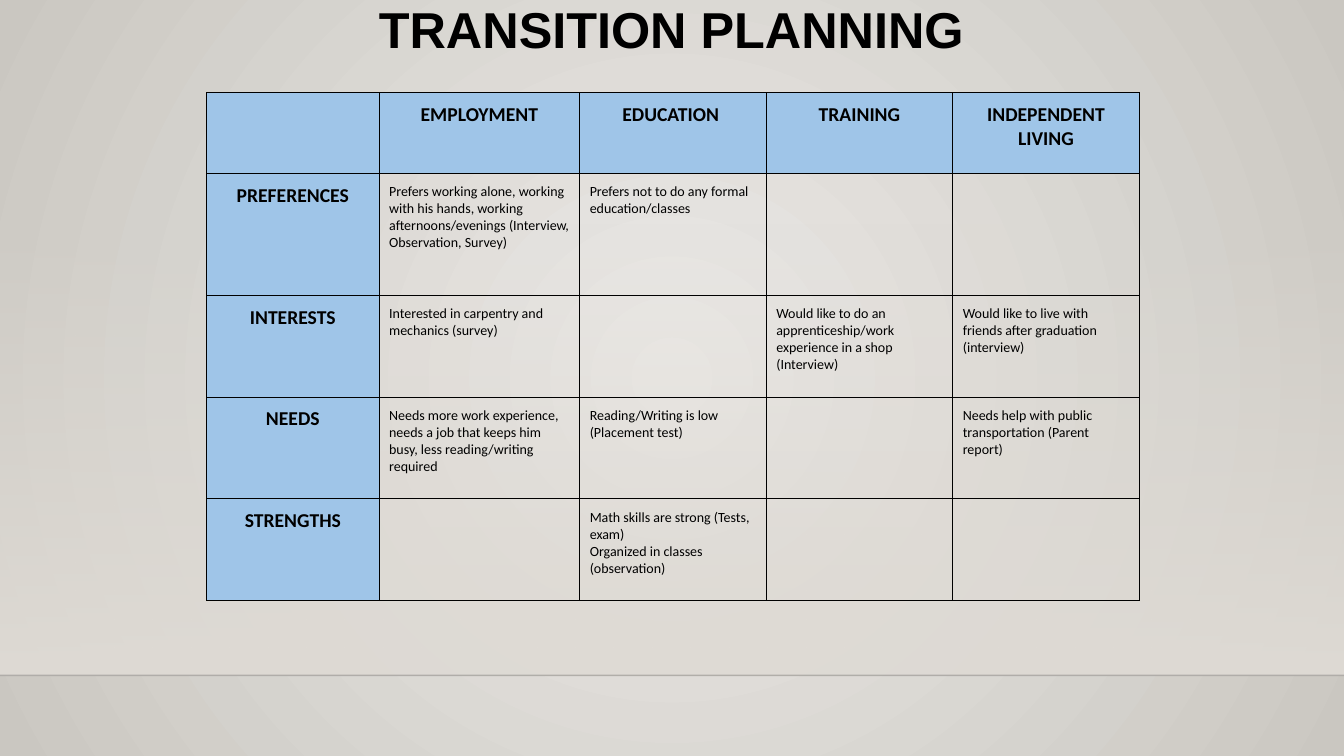
from lxml import etree
from pptx import Presentation
from pptx.dml.color import RGBColor
from pptx.enum.shapes import MSO_CONNECTOR, MSO_SHAPE
from pptx.enum.text import MSO_ANCHOR, MSO_AUTO_SIZE, PP_ALIGN
from pptx.oxml import parse_xml
from pptx.oxml.ns import qn
from pptx.util import Inches, Pt

CENTER, LEFT = PP_ALIGN.CENTER, PP_ALIGN.LEFT
TOP = MSO_ANCHOR.TOP
NO_AUTOFIT = MSO_AUTO_SIZE.NONE
RECT = MSO_SHAPE.RECTANGLE
STRAIGHT = MSO_CONNECTOR.STRAIGHT
NS = "http://schemas.openxmlformats.org/drawingml/2006/main"

THEME = {
    "ink": "000000", "header": "9FC5E8", "horizon": "000001",
    "glow": "ECEAE7", "edge": "CAC7C1", "floor": "DFDBD5",
    "title_font": "Arial", "table_font": "Calibri",
    "title_size": 36, "header_size": 14, "body_size": 10,
}
COLS = [1.71, 1.99, 1.85, 1.85, 1.85]
ROWS = [0.8, 1.21, 1.01, 1.01, 1.01]
CELLS = [
    ["", "EMPLOYMENT", "EDUCATION ", "TRAINING", "INDEPENDENT LIVING"],
    ["PREFERENCES",
     "Prefers working alone, working with his hands, working "
     "afternoons/evenings (Interview, Observation, Survey)",
     "Prefers not to do any formal education/classes", "", ""],
    ["INTERESTS", "Interested in carpentry and mechanics (survey)", "",
     "Would like to do an apprenticeship/work experience in a shop (Interview)",
     "Would like to live with friends after graduation (interview)"],
    ["NEEDS",
     "Needs more work experience, needs a job that keeps him busy, "
     "less reading/writing required",
     "Reading/Writing is low (Placement test)", "",
     "Needs help with public transportation (Parent report)"],
    ["STRENGTHS", "",
     "Math skills are strong (Tests, exam)\nOrganized in classes (observation)",
     "", ""],
]


def set_gradient(fill, parent, start, end, start_alpha, direction):
    fill.gradient()
    old = parent.find(qn("a:gradFill"))
    parent.replace(old, parse_xml(
        f'<a:gradFill xmlns:a="{NS}" rotWithShape="1"><a:gsLst>'
        f'<a:gs pos="0"><a:srgbClr val="{start}"><a:alpha val="{start_alpha}"/></a:srgbClr></a:gs>'
        f'<a:gs pos="100000"><a:srgbClr val="{end}"/></a:gs>'
        f'</a:gsLst>{direction}</a:gradFill>'))


def add_run(p, text, font, size, bold):
    r = p.add_run()
    r.text = text
    r.font.name = font
    r.font.size = Pt(size)
    r.font.bold = bold
    r.font.color.rgb = RGBColor.from_string(THEME["ink"])


prs = Presentation()
prs.slide_width, prs.slide_height = Inches(13.33), Inches(7.5)
W = prs.slide_width
s = prs.slides.add_slide(prs.slide_layouts[5])

bg_fill = s.background.fill
bg_pr = s.element.cSld.find(qn("p:bg")).find(qn("p:bgPr"))
set_gradient(bg_fill, bg_pr, THEME["glow"], THEME["edge"], 100000,
             '<a:path path="circle"><a:fillToRect l="50000" t="50000" r="50000" b="50000"/></a:path>')

horizon = Inches(6.7)
wall_top = Inches(2.21)
sp = s.shapes.add_shape(RECT, 0, wall_top, W, horizon - wall_top)
sp.shadow.inherit = False
sp.line.fill.background()
set_gradient(sp.fill, sp.element.spPr, THEME["floor"], THEME["floor"], 0,
             '<a:lin ang="5400000" scaled="0"/>')

line = s.shapes.add_connector(STRAIGHT, 0, horizon, W, horizon)
line.line.width = Pt(1)
line.line.color.rgb = RGBColor.from_string(THEME["horizon"])
color = line.element.spPr.find(".//" + qn("a:srgbClr"))
etree.SubElement(color, qn("a:alpha")).set("val", "20000")
etree.SubElement(line.element.spPr, qn("a:effectLst"))

title = s.shapes.title
title.left, title.top, title.width, title.height = [Inches(v) for v in (2.03, 0, 9.26, 1.16)]
tf = title.text_frame
tf.word_wrap = True
tf.auto_size = NO_AUTOFIT
tf.vertical_anchor = TOP
p = tf.paragraphs[0]
p.alignment = CENTER
p.line_spacing = 0.9
add_run(p, "TRANSITION PLANNING", THEME["title_font"], THEME["title_size"], True)

table = s.shapes.add_table(len(ROWS), len(COLS), Inches(2.05), Inches(0.92),
                           Inches(sum(COLS)), Inches(sum(ROWS))).table
table.first_row = table.horz_banding = False
for column, width in zip(table.columns, COLS):
    column.width = Inches(width)
for row, height in zip(table.rows, ROWS):
    row.height = Inches(height)

for i, texts in enumerate(CELLS):
    for j, text in enumerate(texts):
        cell = table.cell(i, j)
        is_header = i == 0 or j == 0
        cell.margin_left = cell.margin_right = Inches(0.1)
        cell.margin_top = cell.margin_bottom = Inches(0.1)
        if is_header:
            cell.fill.solid()
            cell.fill.fore_color.rgb = RGBColor.from_string(THEME["header"])
        else:
            cell.fill.background()
        tc_pr = cell._tc.get_or_add_tcPr()
        for k, side in enumerate("LRTB"):
            tc_pr.insert(k, parse_xml(
                f'<a:ln{side} xmlns:a="{NS}" w="9525"><a:solidFill>'
                f'<a:srgbClr val="{THEME["ink"]}"/></a:solidFill></a:ln{side}>'))
        tf = cell.text_frame
        for k, part in enumerate(text.split("\n") if text else []):
            p = tf.add_paragraph() if k else tf.paragraphs[0]
            p.alignment = CENTER if is_header else LEFT
            size = THEME["header_size"] if is_header else THEME["body_size"]
            add_run(p, part, THEME["table_font"], size, is_header)

prs.save("out.pptx")
